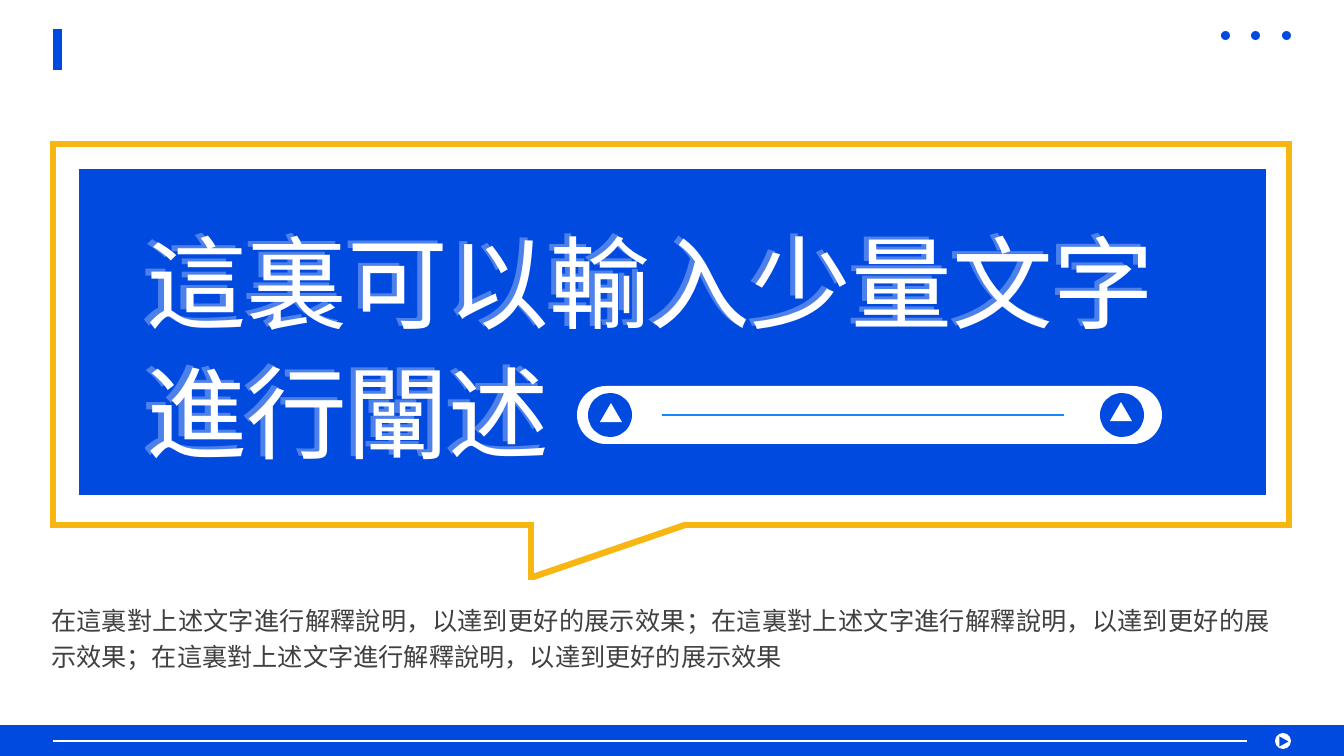
from dataclasses import dataclass

from lxml.etree import SubElement
from pptx import Presentation
from pptx.dml.color import RGBColor
from pptx.enum.shapes import MSO_CONNECTOR, MSO_SHAPE
from pptx.enum.text import MSO_ANCHOR, PP_ALIGN
from pptx.oxml.ns import qn
from pptx.util import Pt

SCALE = 12192000 / 1344  # EMU per px
FONT = "Karla"
COLORS = {
    "blue": "014AE0",
    "sky": "1587FD",
    "yellow": "F8B613",
    "white": "FFFFFF",
    "gray": "404040",
}
TITLE = ("這裏可以輸入少量文字", "進行闡述")
BODY = ("在這裏對上述文字進行解釋說明，以達到更好的展示效果；"
        "在這裏對上述文字進行解釋說明，以達到更好的展示效果；"
        "在這裏對上述文字進行解釋說明，以達到更好的展示效果",)


@dataclass
class Block:
    kind: MSO_SHAPE
    left: int
    top: int
    width: int
    height: int
    color: str
    rotation: int = 0


@dataclass
class Line:
    x1: int
    y1: int
    x2: int
    y2: int
    color: str = "yellow"
    weight: float = 4.5


@dataclass
class Text:
    left: int
    top: int
    width: int
    height: int
    paragraphs: tuple[str, ...]
    size: int
    color: str
    spacing: float = 1.0
    opacity: int = 100


def emu(px: int) -> int:
    return round(px * SCALE)


def rgb(name: str) -> RGBColor:
    return RGBColor.from_string(COLORS[name])


def draw_block(slide, block: Block) -> None:
    shape = slide.shapes.add_shape(
        block.kind, emu(block.left), emu(block.top), emu(block.width), emu(block.height))
    shape.shadow.inherit = False
    shape.fill.solid()
    shape.fill.fore_color.rgb = rgb(block.color)
    shape.line.fill.background()
    shape.rotation = block.rotation
    if block.kind == MSO_SHAPE.ROUNDED_RECTANGLE:
        shape.adjustments[0] = 0.5


def draw_line(slide, line: Line) -> None:
    connector = slide.shapes.add_connector(
        MSO_CONNECTOR.STRAIGHT, emu(line.x1), emu(line.y1), emu(line.x2), emu(line.y2))
    connector.line.color.rgb = rgb(line.color)
    connector.line.width = Pt(line.weight)
    SubElement(connector._element.spPr, qn("a:effectLst"))


def draw_text(slide, text: Text) -> None:
    box = slide.shapes.add_textbox(
        emu(text.left), emu(text.top), emu(text.width), emu(text.height))
    frame = box.text_frame
    frame.word_wrap = True
    frame.vertical_anchor = MSO_ANCHOR.TOP
    frame.margin_left = frame.margin_right = emu(8)
    frame.margin_top = frame.margin_bottom = emu(8)
    frame.text = "\n".join(text.paragraphs)
    for index, paragraph in enumerate(frame.paragraphs):
        paragraph.alignment = PP_ALIGN.JUSTIFY
        paragraph.line_spacing = text.spacing
        paragraph.space_before = Pt(3 if index else 0)
        paragraph.space_after = Pt(3)
        for run in paragraph.runs:
            run.font.size = Pt(text.size)
            run.font.name = FONT
            run.font.color.rgb = rgb(text.color)
            properties = run.font._element
            SubElement(properties, qn("a:ea"), typeface=FONT)
            if text.opacity < 100:
                color = properties.find(qn("a:solidFill")).find(qn("a:srgbClr"))
                SubElement(color, qn("a:alpha"), val=str(text.opacity * 1000))


# Page furniture: corner dots, accent bar, footer with play button
FURNITURE = [
    *(Block(MSO_SHAPE.OVAL, left, 31, 9, 9, "blue") for left in (1221, 1251, 1282)),
    Block(MSO_SHAPE.RECTANGLE, 53, 29, 9, 41, "blue"),
    Block(MSO_SHAPE.RECTANGLE, 0, 725, 1344, 31, "blue"),
    Block(MSO_SHAPE.OVAL, 1275, 733, 16, 16, "white"),
    Block(MSO_SHAPE.ISOSCELES_TRIANGLE, 1279, 737, 10, 9, "blue", 90),
    Line(53, 741, 1247, 741, "white", 1),
]

# Speech bubble: blue panel, title, yellow outline with its tail
BUBBLE = [
    Block(MSO_SHAPE.RECTANGLE, 79, 169, 1187, 326, "blue"),
    Text(138, 213, 1152, 268, TITLE, 72, "white"),
    Line(53, 525, 534, 525),
    Line(683, 525, 1289, 525),
    Line(531, 522, 531, 580),
    Line(685, 525, 533, 577),
    Line(53, 144, 1289, 144),
    *(Line(x, 141, x, 528) for x in (53, 1289)),
]

# Slider: white pill with a round button at each end
SLIDER = [
    Block(MSO_SHAPE.ROUNDED_RECTANGLE, 577, 386, 585, 58, "white"),
    *(Block(MSO_SHAPE.OVAL, left, 393, 44, 44, "blue") for left in (588, 1100)),
    Line(662, 415, 1064, 415, "sky", 1),
    Block(MSO_SHAPE.ISOSCELES_TRIANGLE, 600, 403, 22, 19, "white"),
    Block(MSO_SHAPE.ISOSCELES_TRIANGLE, 1110, 402, 22, 19, "white"),
]

# Explanation below the bubble and the translucent echo of the title
EXPLANATION = Text(43, 591, 1236, 178, BODY, 18, "gray", spacing=1.2)
TITLE_ECHO = Text(133, 210, 1152, 268, TITLE, 72, "white", opacity=30)

DRAWERS = {Block: draw_block, Line: draw_line, Text: draw_text}


def main() -> None:
    presentation = Presentation()
    presentation.slide_width = emu(1344)
    presentation.slide_height = emu(756)
    slide = presentation.slides.add_slide(presentation.slide_layouts[6])
    for element in [*FURNITURE, *BUBBLE, EXPLANATION, *SLIDER, TITLE_ECHO]:
        DRAWERS[type(element)](slide, element)
    presentation.save("out.pptx")


if __name__ == "__main__":
    main()
